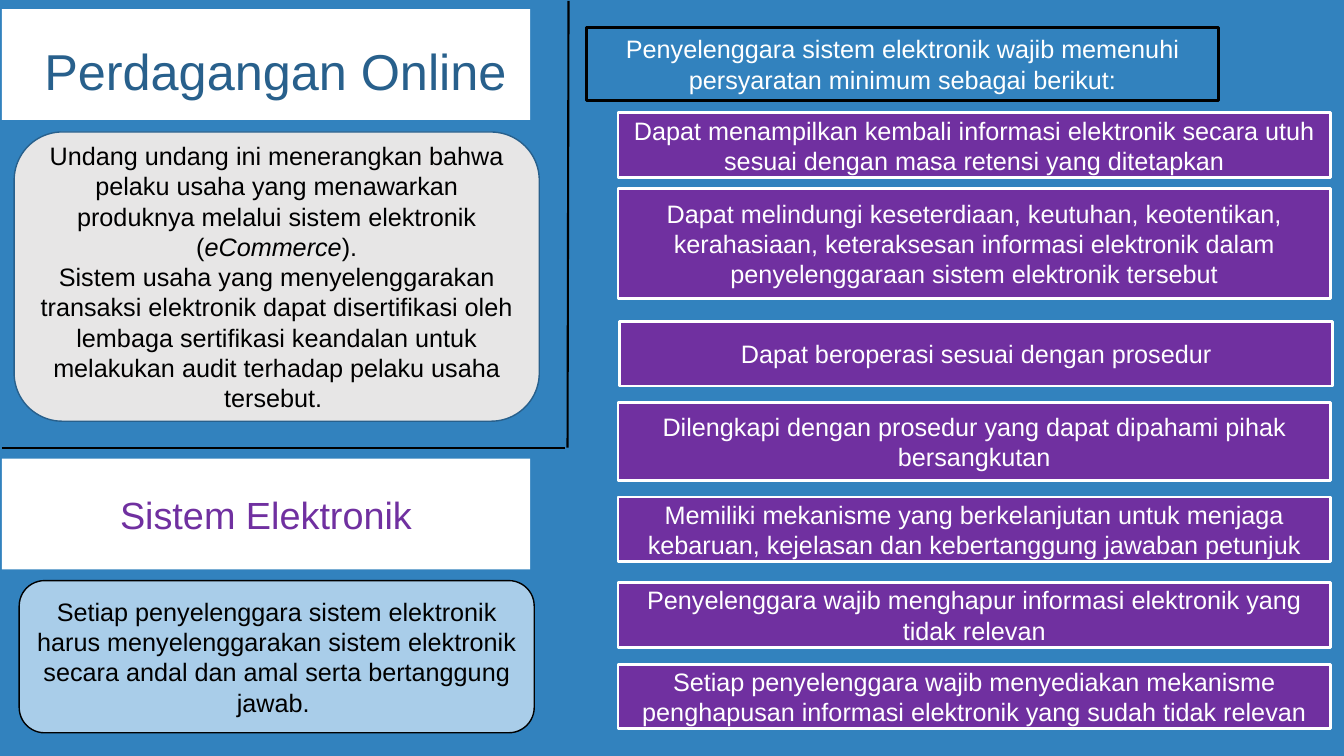
"""Build the slide on online trade and electronic systems."""
from dataclasses import dataclass

from lxml.etree import SubElement
from pptx import Presentation
from pptx.dml.color import RGBColor
from pptx.enum.shapes import MSO_CONNECTOR, MSO_SHAPE
from pptx.enum.text import MSO_ANCHOR, PP_ALIGN
from pptx.oxml.ns import qn
from pptx.util import Pt

BLUE, NAVY, PURPLE = "3282BE", "28608C", "7030A0"
WHITE, BLACK = "FFFFFF", "000000"
RECT = MSO_SHAPE.RECTANGLE


@dataclass
class Box:
    left: float
    top: float
    width: float
    height: float
    fill: str
    text: str = ""
    ink: str = BLACK
    size: float = 18
    line: str = ""
    weight: float = 1
    kind: int = RECT


@dataclass
class Rule:
    start: tuple[float, float]
    end: tuple[float, float]


def shade(code: str) -> RGBColor:
    return RGBColor.from_string(code)


def assign(target, values: dict) -> None:
    for name, value in values.items():
        setattr(target, name, value)


def write(frame, text: str, ink: str, size: float, align) -> None:
    """Fill a frame; newlines split paragraphs, asterisks mark italics."""
    assign(frame, {"word_wrap": True, "vertical_anchor": MSO_ANCHOR.MIDDLE})
    for row, line in enumerate(text.split("\n")):
        para = frame.add_paragraph() if row else frame.paragraphs[0]
        para.alignment = align
        for part, words in enumerate(line.split("*")):
            run = para.add_run()
            run.text = words
            assign(run.font, {"name": "Arial", "size": Pt(size), "italic": part % 2 == 1})
            run.font.color.rgb = shade(ink)


def draw_box(shapes, box: Box) -> None:
    shape = shapes.add_shape(
        box.kind, Pt(box.left), Pt(box.top), Pt(box.width), Pt(box.height))
    shape.shadow.inherit = False
    shape.fill.solid()
    shape.fill.fore_color.rgb = shade(box.fill)
    if box.line:
        shape.line.color.rgb = shade(box.line)
        shape.line.width = Pt(box.weight)
    else:
        shape.line.fill.background()
    if box.text:
        write(shape.text_frame, box.text, box.ink, box.size, PP_ALIGN.CENTER)


def draw_rule(shapes, rule: Rule) -> None:
    line = shapes.add_connector(
        MSO_CONNECTOR.STRAIGHT, *map(Pt, rule.start), *map(Pt, rule.end))
    line.line.color.rgb = shade(BLACK)
    line.line.width = Pt(1.5)
    SubElement(line._element.spPr, qn("a:effectLst"))


def draw_title(shapes) -> None:
    title = shapes.add_textbox(Pt(31.7), Pt(28.1), Pt(331.2), Pt(43.9))
    frame = title.text_frame
    sides = ("left", "top", "right", "bottom")
    assign(frame, {f"margin_{side}": 0 for side in sides})
    write(frame, "Perdagangan Online", NAVY, 36, PP_ALIGN.LEFT)


TRADE = (
    "Undang undang ini menerangkan bahwa pelaku usaha yang menawarkan produknya "
    "melalui sistem elektronik (*eCommerce*).\n"
    "Sistem usaha yang menyelenggarakan transaksi elektronik dapat disertifikasi oleh "
    "lembaga sertifikasi keandalan untuk melakukan audit terhadap pelaku usaha tersebut. ")
SYSTEM = (
    "Setiap penyelenggara sistem elektronik harus menyelenggarakan sistem elektronik "
    "secara andal dan amal serta bertanggung jawab. ")
HEAD = "Penyelenggara sistem elektronik wajib memenuhi persyaratan minimum sebagai berikut:"

BANNER = Box(1.4, 6.5, 377.3, 79.2, WHITE)
TRADE_BOX = Box(10.1, 94.3, 375.1, 206.6, "E7E6E6", TRADE, line=NAVY,
                kind=MSO_SHAPE.FLOWCHART_ALTERNATE_PROCESS)
RULES = [Rule((406.1, 0.7), (405.4, 319.7)), Rule((1.4, 319.7), (403.9, 319.7))]
PANELS = [
    Box(1.4, 327.6, 377.3, 79.2, WHITE, "Sistem Elektronik", PURPLE, 27),
    Box(13.7, 414.7, 367.9, 108.7, "A9CDE9", SYSTEM, line=BLACK,
        kind=MSO_SHAPE.ROUNDED_RECTANGLE),
    Box(419, 19.4, 451.4, 52.6, BLUE, HEAD, WHITE, line=BLACK, weight=2.25),
]
NEEDS = [
    (441.4, 80.6, 46.1, "Dapat menampilkan kembali informasi elektronik secara utuh "
     "sesuai dengan masa retensi yang ditetapkan"),
    (441.4, 134.6, 78.5, "Dapat melindungi keseterdiaan, keutuhan, keotentikan, kerahasiaan, "
     "keteraksesan informasi elektronik dalam penyelenggaraan sistem elektronik tersebut"),
    (442.8, 229.7, 46.1, "Dapat beroperasi sesuai dengan prosedur"),
    (441.4, 287.3, 56.2, "Dilengkapi dengan prosedur yang dapat dipahami pihak bersangkutan"),
    (441.4, 355, 46.1, "Memiliki mekanisme yang berkelanjutan untuk menjaga kebaruan, "
     "kejelasan dan kebertanggung jawaban petunjuk"),
    (441.4, 416.2, 46.1, "Penyelenggara wajib menghapur informasi elektronik yang "
     "tidak relevan"),
    (441.4, 474.5, 46.1, "Setiap penyelenggara wajib menyediakan mekanisme penghapusan "
     "informasi elektronik yang sudah tidak relevan"),
]


def main() -> None:
    deck = Presentation()
    assign(deck, {"slide_width": Pt(960), "slide_height": Pt(540)})
    slide = deck.slides.add_slide(deck.slide_layouts[6])
    slide.background.fill.solid()
    slide.background.fill.fore_color.rgb = shade(BLUE)
    shapes = slide.shapes
    draw_box(shapes, BANNER)
    draw_title(shapes)
    draw_box(shapes, TRADE_BOX)
    group = shapes.add_group_shape()
    for rule in RULES:
        draw_rule(group.shapes, rule)
    for panel in PANELS:
        draw_box(shapes, panel)
    for left, top, height, text in NEEDS:
        draw_box(shapes, Box(left, top, 509, height, PURPLE, text, WHITE,
                             line=WHITE, weight=2))
    deck.save("out.pptx")


if __name__ == "__main__":
    main()
